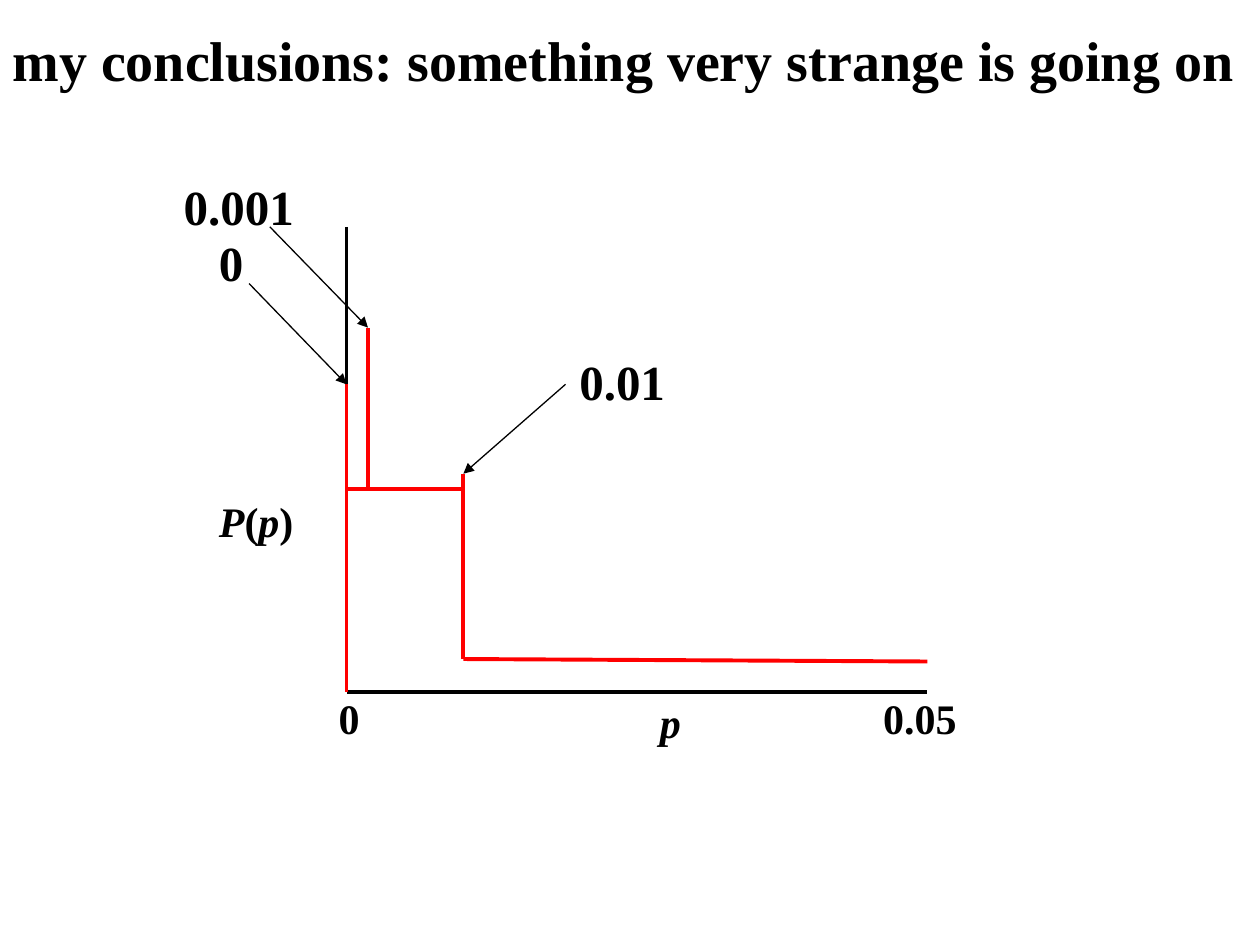
from dataclasses import dataclass

from lxml import etree
from pptx import Presentation
from pptx.dml.color import RGBColor
from pptx.enum.shapes import MSO_CONNECTOR
from pptx.enum.text import MSO_AUTO_SIZE
from pptx.oxml.ns import qn
from pptx.shapes.shapetree import GroupShapes, SlideShapes
from pptx.util import Pt

STRAIGHT = MSO_CONNECTOR.STRAIGHT
FIT_TEXT = MSO_AUTO_SIZE.SHAPE_TO_FIT_TEXT
FONT = "Times New Roman"
COLORS = {"ink": "000000", "curve": "FF0000"}
Point = tuple[float, float]


@dataclass(frozen=True)
class Label:
    left: float
    top: float
    width: float
    height: float
    size: float
    runs: tuple[tuple[str, bool], ...]


@dataclass(frozen=True)
class Line:
    start: Point
    end: Point
    color: str = "ink"
    weight: float = 2.25
    arrow: bool = False


def draw_label(shapes: SlideShapes, label: Label) -> None:
    box = shapes.add_textbox(
        Pt(label.left), Pt(label.top), Pt(label.width), Pt(label.height)
    )
    frame = box.text_frame
    frame.word_wrap = False
    frame.auto_size = FIT_TEXT
    for text, italic in label.runs:
        run = frame.paragraphs[0].add_run()
        run.text = text
        run.font.name = FONT
        run.font.size = Pt(label.size)
        run.font.bold = True
        run.font.italic = italic
        run.font.color.rgb = RGBColor.from_string(COLORS["ink"])


def draw_line(shapes: SlideShapes | GroupShapes, line: Line) -> None:
    connector = shapes.add_connector(
        STRAIGHT, *(Pt(value) for value in line.start + line.end)
    )
    connector.line.color.rgb = RGBColor.from_string(COLORS[line.color])
    connector.line.width = Pt(line.weight)
    if line.arrow:
        outline = connector.line._get_or_add_ln()
        etree.SubElement(outline, qn("a:tailEnd"), type="triangle")
    etree.SubElement(connector._element.spPr, qn("a:effectLst"))


AXIS_LEFT, AXIS_RIGHT = 198, 530
AXIS_TOP, AXIS_BOTTOM = 129.6, 395.3
STEP_X, STEP_Y = 264.8, 279.4
TAIL_START_Y, TAIL_END_Y = 376.6, 378
ORIGIN = (AXIS_LEFT, AXIS_BOTTOM)
ZERO_PEAK = (AXIS_LEFT, 219.6)
THOUSANDTH_PEAK = (210.3, 187.2)
HUNDREDTH_PEAK = (STEP_X, 270.7)

AXES = (
    Line((AXIS_LEFT, AXIS_TOP), ORIGIN),
    Line(ORIGIN, (AXIS_RIGHT, AXIS_BOTTOM)),
)
CURVE = (
    Line((STEP_X, TAIL_START_Y), (AXIS_RIGHT, TAIL_END_Y), "curve"),
    Line((AXIS_LEFT, STEP_Y), (STEP_X, STEP_Y), "curve"),
    Line((STEP_X, TAIL_START_Y), HUNDREDTH_PEAK, "curve"),
    Line(ORIGIN, ZERO_PEAK, "curve"),
    Line((THOUSANDTH_PEAK[0], STEP_Y), THOUSANDTH_PEAK, "curve"),
)
POINTERS = tuple(
    Line(start, peak, weight=0.75, arrow=True)
    for start, peak in (
        ((154.2, 129.6), THOUSANDTH_PEAK),
        ((323.2, 219.6), HUNDREDTH_PEAK),
        ((142.3, 162), ZERO_PEAK),
    )
)
TITLE = "my conclusions: something very strange is going on"
LABELS = (
    Label(0, 10.8, 719.3, 46, 32, ((TITLE, False),)),
    Label(118, 279.4, 57.6, 36, 24,
          (("P", True), ("(", False), ("p", True), (")", False))),
    Label(370, 394.6, 26.6, 36, 24, (("p", True),)),
    Label(186.5, 392.4, 26.6, 36, 24, (("0", False),)),
    Label(497.5, 392.4, 56.9, 36, 24, (("0.05", False),)),
    Label(324, 197.3, 64, 41, 28, (("0.01", False),)),
    Label(97.9, 97.2, 78.5, 41, 28, (("0.001", False),)),
    Label(118, 129.6, 28.8, 41, 28, (("0", False),)),
)


def main() -> None:
    presentation = Presentation()
    presentation.slide_width = Pt(720)
    presentation.slide_height = Pt(540)
    slide = presentation.slides.add_slide(presentation.slide_layouts[6])
    axes_group = slide.shapes.add_group_shape()
    for axis in AXES:
        draw_line(axes_group.shapes, axis)
    for line in CURVE + POINTERS:
        draw_line(slide.shapes, line)
    for label in LABELS:
        draw_label(slide.shapes, label)
    presentation.save("out.pptx")


if __name__ == "__main__":
    main()
